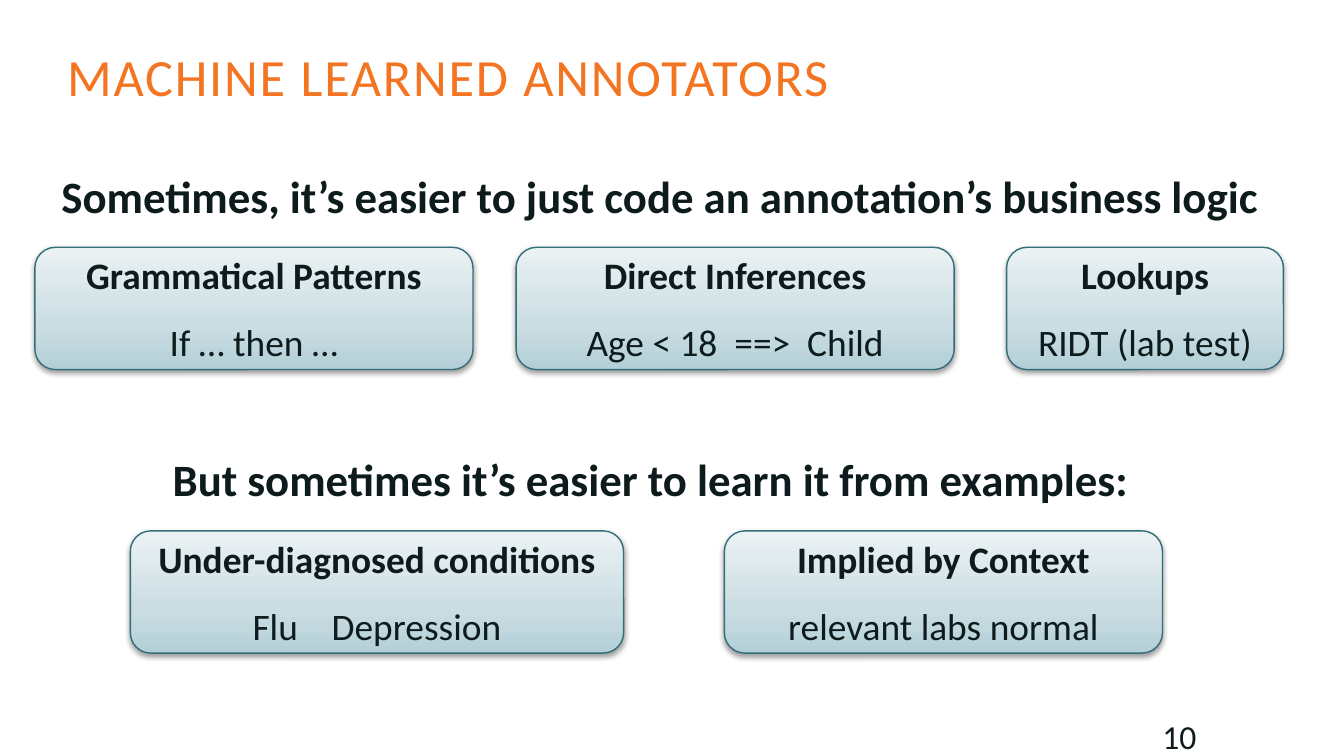
from copy import deepcopy

from lxml.etree import SubElement
from pptx import Presentation
from pptx.dml.color import RGBColor
from pptx.enum.shapes import MSO_SHAPE
from pptx.enum.text import MSO_ANCHOR, MSO_AUTO_SIZE, PP_ALIGN
from pptx.oxml.ns import qn
from pptx.util import Inches, Pt

ORANGE = RGBColor(0xF4, 0x75, 0x21)
INK = RGBColor(0x0D, 0x1B, 0x1C)
TEAL = RGBColor(0x33, 0x6E, 0x78)
GRADIENT = [
    (0, RGBColor(0xB3, 0xCF, 0xD7)),
    (0.35, RGBColor(0xCA, 0xDD, 0xE2)),
    (1, RGBColor(0xEB, 0xF2, 0xF4)),
]
CARD_HEIGHT = 0.91
CODED_TOP = 1.84
LEARNED_TOP = 3.95
CARDS = [
    (0.26, CODED_TOP, 3.26, "Grammatical Patterns", ["If … then …"]),
    (3.84, CODED_TOP, 3.26, "Direct Inferences", ["Age < 18", "==>", "Child"], 4.5),
    (7.49, CODED_TOP, 2.06, "Lookups", ["RIDT (lab test)"]),
    (0.97, LEARNED_TOP, 3.67, "Under-diagnosed conditions", ["Flu", "Depression"], 13.5),
    (5.39, LEARNED_TOP, 3.26, "Implied by Context", ["relevant labs normal"]),
]


def write(paragraph, text, size=20, color=INK, bold=False, align=PP_ALIGN.CENTER,
          before=None, line_spacing=None, tracking=None):
    """Append formatted text to a paragraph."""
    paragraph.alignment = align
    if before is not None:
        paragraph.space_before = Pt(before)
    if line_spacing is not None:
        paragraph.line_spacing = line_spacing
    run = paragraph.add_run()
    run.text = text
    run.font.name = "Calibri"
    run.font.size = Pt(size)
    run.font.bold = bold
    run.font.color.rgb = color
    if tracking is not None:
        run.font._element.set("spc", str(int(tracking * 100)))


class AnnotatorSlide:
    """Hold the slide and its shared style."""

    def __init__(self, presentation):
        """Add a title-only slide."""
        self.slide = presentation.slides.add_slide(presentation.slide_layouts[5])

    def title(self, text):
        """Place and format the title placeholder."""
        title = self.slide.shapes.title
        title.left, title.top = Inches(0.5), Inches(0.17)
        title.width, title.height = Inches(9), Inches(0.85)
        frame = title.text_frame
        frame.margin_left = frame.margin_right = 0
        frame.margin_top = frame.margin_bottom = 0
        frame.vertical_anchor = MSO_ANCHOR.MIDDLE
        frame.auto_size = MSO_AUTO_SIZE.NONE
        write(frame.paragraphs[0], text, size=28, color=ORANGE,
              align=PP_ALIGN.LEFT, line_spacing=0.9, tracking=1)

    def label(self, left, top, width, height, text, **style):
        """Add a wrapped line of text."""
        box = self.slide.shapes.add_textbox(
            Inches(left), Inches(top), Inches(width), Inches(height))
        box.text_frame.word_wrap = True
        write(box.text_frame.paragraphs[0], text, **style)

    def card(self, left, top, width, heading, example, gap=0):
        """Add a shaded card with a heading and the spaced parts of an example."""
        card = self.slide.shapes.add_shape(
            MSO_SHAPE.FLOWCHART_ALTERNATE_PROCESS,
            Inches(left), Inches(top), Inches(width), Inches(CARD_HEIGHT))
        card.line.color.rgb = TEAL
        card.line.width = Pt(0.75)
        self.shade(card)
        self.drop_shadow(card)
        frame = card.text_frame
        frame.word_wrap = True
        frame.vertical_anchor = MSO_ANCHOR.MIDDLE
        write(frame.paragraphs[0], heading, bold=True)
        line = frame.add_paragraph()
        write(line, example[0], before=12)
        for part in example[1:]:
            write(line, " ", tracking=gap)
            write(line, part)

    def shade(self, card):
        """Fill a card with the upward gradient."""
        card.fill.gradient()
        card.fill.gradient_angle = 90
        stop_list = card._element.spPr.find(".//" + qn("a:gsLst"))
        stop_list.append(deepcopy(stop_list[0]))
        for stop, (position, color) in zip(card.fill.gradient_stops, GRADIENT):
            stop.position = position
            stop.color.rgb = color

    def drop_shadow(self, card):
        """Cast a soft shadow below a card."""
        card.shadow.inherit = False
        effects = card._element.spPr.find(qn("a:effectLst"))
        shadow = SubElement(effects, qn("a:outerShdw"), blurRad=str(Pt(3.1)),
                            dist=str(Pt(1.6)), dir="5400000", rotWithShape="0")
        color = SubElement(shadow, qn("a:srgbClr"), val="000000")
        SubElement(color, qn("a:alpha"), val="38000")


def main():
    """Build and save the slide."""
    presentation = Presentation()
    presentation.slide_width = Inches(10)
    presentation.slide_height = Inches(10 * 9 / 16)
    page = AnnotatorSlide(presentation)
    page.title("MACHINE LEARNED ANNOTATORS")
    for card in CARDS:
        page.card(*card)
    page.label(0.29, 1.21, 9.24, 0.5,
               "Sometimes, it’s easier to just code an annotation’s business logic",
               size=24, bold=True)
    page.label(0.22, 3.31, 9.24, 0.5,
               "But sometimes it’s easier to learn it from examples:",
               size=24, bold=True)
    page.label(8.55, 5.28, 1.45, 0.23, "10", size=18, align=PP_ALIGN.LEFT)
    presentation.save("out.pptx")


if __name__ == "__main__":
    main()
